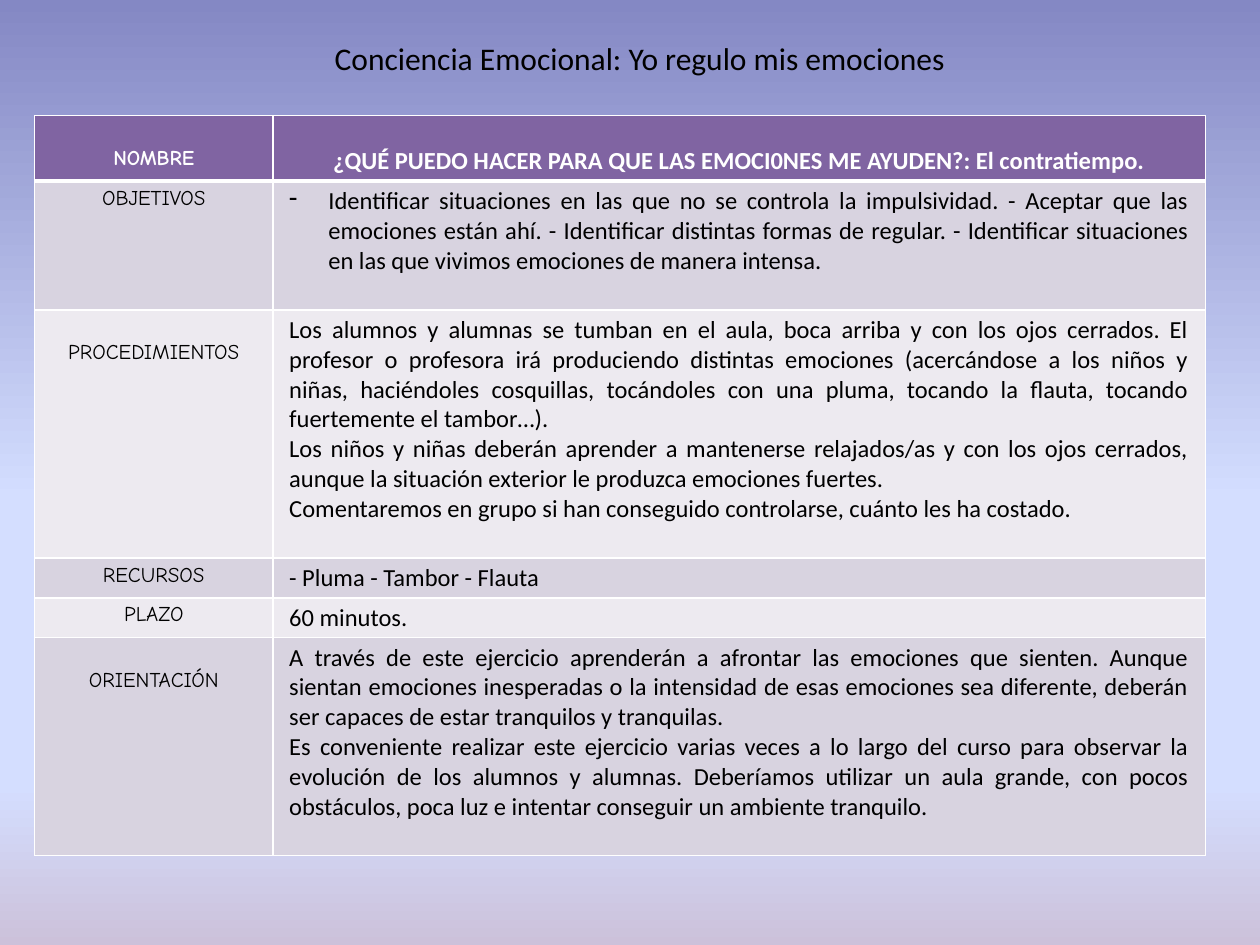
from pptx import Presentation
from pptx.dml.color import RGBColor
from pptx.enum import text
from pptx.oxml import parse_xml
from pptx.oxml.ns import nsdecls, qn
from pptx.util import Cm, Pt

WHITE, BLACK, PURPLE = "FFFFFF", "000000", "8064A2"
BANDS = ["D8D3E0", "EDEAF0"]
BACKGROUND = [(0, "8488C4"), (53, "D4DEFF"), (83, "D4DEFF"), (100, "CCC1DA")]
TITLE = "Conciencia Emocional: Yo regulo mis emociones"
LABEL_DROP = 0.52  # cm, one 12 pt line

# label, paragraphs, row height in cm, label drop, text drop
ROWS = [
    ("NOMBRE",
     ["¿QUÉ PUEDO HACER PARA QUE LAS EMOCI0NES ME AYUDEN?: El contratiempo."],
     1.31, LABEL_DROP, LABEL_DROP),
    ("OBJETIVOS",
     ["Identificar situaciones en las que no se controla la impulsividad. "
      "- Aceptar que las emociones están ahí. "
      "- Identificar distintas formas de regular. "
      "- Identificar situaciones en las que vivimos emociones de manera intensa."],
     2.6, 0, 0),
    ("PROCEDIMIENTOS",
     ["Los alumnos y alumnas se tumban en el aula, boca arriba y con los ojos "
      "cerrados. El profesor o profesora irá produciendo distintas emociones "
      "(acercándose a los niños y niñas, haciéndoles cosquillas, tocándoles con "
      "una pluma, tocando la flauta, tocando fuertemente el tambor…).",
      "Los niños y niñas deberán aprender a mantenerse relajados/as y con los ojos "
      "cerrados, aunque la situación exterior le produzca emociones fuertes.",
      "Comentaremos en grupo si han conseguido controlarse, cuánto les ha costado."],
     5, LABEL_DROP, 0),
    ("RECURSOS", ["- Pluma - Tambor - Flauta"], 0.79, 0, 0),
    ("PLAZO", ["60 minutos."], 0.79, 0, 0),
    ("ORIENTACIÓN",
     ["A través de este ejercicio aprenderán a afrontar las emociones que sienten. "
      "Aunque sientan emociones inesperadas o la intensidad de esas emociones sea "
      "diferente, deberán ser capaces de estar tranquilos y tranquilas.",
      "Es conveniente realizar este ejercicio varias veces a lo largo del curso para "
      "observar la evolución de los alumnos y alumnas. Deberíamos utilizar un aula "
      "grande, con pocos obstáculos, poca luz e intentar conseguir un ambiente "
      "tranquilo."],
     4.39, LABEL_DROP, 0),
]


def rgb(value):
    return RGBColor.from_string(value)


def style(p, font, size, color, align, bold=False):
    p.alignment = align
    p.font.name, p.font.size, p.font.bold = font, Pt(size), bold
    p.font.color.rgb = rgb(color)


def paint_background(s):
    fill = s.background.fill
    fill.gradient()
    fill.gradient_angle = 270
    stops = next(s._element.iter(qn("a:gsLst")))
    for stop in list(stops):
        stops.remove(stop)
    for percent, color in BACKGROUND:
        stops.append(parse_xml(
            f'<a:gs {nsdecls("a")} pos="{percent * 1000}">'
            f'<a:srgbClr val="{color}"/></a:gs>'))


def set_borders(cell, top, bottom):
    """White cell borders; top and bottom widths in points, sides 1 pt."""
    tc_pr = cell._tc.get_or_add_tcPr()
    for i, (side, width) in enumerate(
            [("L", 1), ("R", 1), ("T", top), ("B", bottom)]):
        tc_pr.insert(i, parse_xml(
            f'<a:ln{side} {nsdecls("a")} w="{Pt(width)}"><a:solidFill>'
            f'<a:srgbClr val="{WHITE}"/></a:solidFill></a:ln{side}>'))


def add_dash_bullet(p):
    p_pr = p._p.get_or_add_pPr()
    p_pr.set("marL", str(Cm(0.79)))
    p_pr.set("indent", str(-Cm(0.79)))
    bullet = parse_xml(f'<a:buChar {nsdecls("a")} char="-"/>')
    p_pr.insert_element_before(bullet, "a:tabLst", "a:defRPr", "a:extLst")


def fill_cell(cell, paragraphs, drop, fill, **font):
    cell.fill.solid()
    cell.fill.fore_color.rgb = rgb(fill)
    cell.margin_left = cell.margin_right = Cm(0.33)
    cell.margin_top, cell.margin_bottom = Cm(0.1 + drop), Cm(0.1)
    tf = cell.text_frame
    tf.text = "\n".join(paragraphs)
    for p in tf.paragraphs:
        style(p, **font)


def add_title(s, left, top, width, height):
    tf = s.shapes.add_textbox(Cm(left), Cm(top), Cm(width), Cm(height)).text_frame
    tf.word_wrap = True
    tf.text = TITLE
    style(tf.paragraphs[0], "Calibri", 18, BLACK, text.PP_ALIGN.CENTER)


def add_activity_table(s, left, top, widths):
    height = sum(row[2] for row in ROWS)
    table = s.shapes.add_table(len(ROWS), len(widths), Cm(left), Cm(top),
                               Cm(sum(widths)), Cm(height)).table
    for column, width in zip(table.columns, widths):
        column.width = Cm(width)
    center, justify = text.PP_ALIGN.CENTER, text.PP_ALIGN.JUSTIFY
    for i, (label, paragraphs, row_height, label_drop, text_drop) in enumerate(ROWS):
        header = i == 0
        table.rows[i].height = Cm(row_height)
        fill = PURPLE if header else BANDS[(i - 1) % 2]
        color = WHITE if header else BLACK
        fill_cell(table.cell(i, 0), [label], label_drop, fill, font="Comic Neue",
                  size=12, color=color, align=center, bold=header)
        fill_cell(table.cell(i, 1), paragraphs, text_drop, fill, font="Calibri",
                  size=14, color=color, align=center if header else justify,
                  bold=header)
        for cell in table.rows[i].cells:
            set_borders(cell, top=3 if i == 1 else 1, bottom=3 if header else 1)
    add_dash_bullet(table.cell(1, 1).text_frame.paragraphs[0])


def main():
    prs = Presentation()
    prs.slide_width, prs.slide_height = Cm(25.4), Cm(19.05)
    s = prs.slides.add_slide(prs.slide_layouts[6])
    paint_background(s)
    add_activity_table(s, 0.7, 2.33, [4.8, 18.8])
    add_title(s, 5.9, 0.66, 14, 1.02)
    prs.save("out.pptx")


if __name__ == "__main__":
    main()
